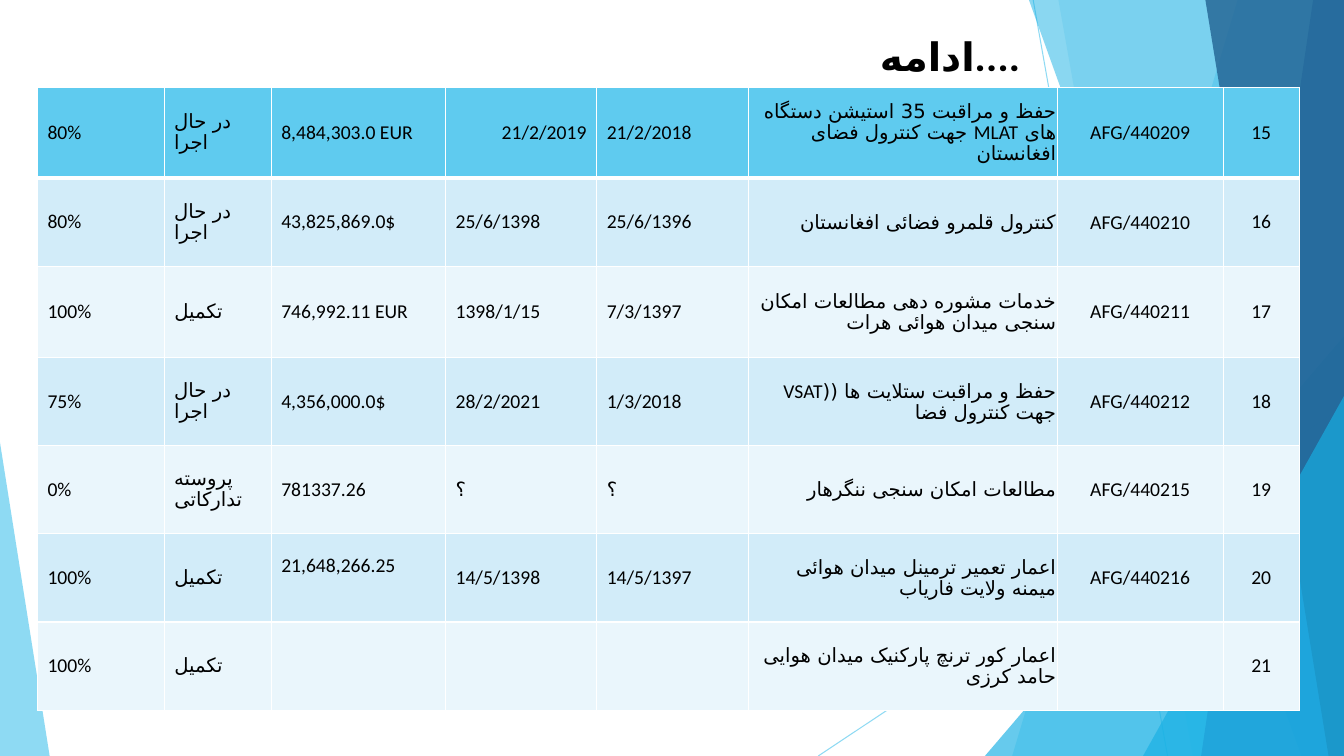
from dataclasses import astuple, dataclass

from lxml import etree
from pptx import Presentation
from pptx.dml.color import RGBColor
from pptx.enum.shapes import MSO_CONNECTOR, MSO_SHAPE
from pptx.enum.text import MSO_ANCHOR, MSO_AUTO_SIZE, PP_ALIGN
from pptx.oxml.ns import qn
from pptx.util import Pt

LEFT, CENTER, RIGHT = PP_ALIGN.LEFT, PP_ALIGN.CENTER, PP_ALIGN.RIGHT
MIDDLE = MSO_ANCHOR.MIDDLE
TRIANGLE = MSO_SHAPE.ISOSCELES_TRIANGLE
STRAIGHT = MSO_CONNECTOR.STRAIGHT

WIDTH, HEIGHT = 960, 540
PERSIAN_FONT = "DejaVu Sans"
COLORS = {
    "sky": "5FCBEF", "azure": "17B0E4", "blue": "2E83C3", "navy": "226292",
    "band_dark": "D2ECF9", "band_light": "EAF6FC",
    "text": "000000", "border": "FFFFFF",
}


@dataclass
class Ray:
    start: tuple[float, float]
    end: tuple[float, float]


@dataclass
class Facet:
    top_x: float
    bottom_x: float
    color: str
    opacity: int


@dataclass
class Wedge:
    left: float
    top: float
    width: float
    apex: float
    color: str
    opacity: int


@dataclass
class Project:
    progress: str
    status: str
    cost: str
    end: str
    start: str
    title: str
    code: str
    number: str


RAYS = [Ray((738, 0), (834, HEIGHT)), Ray((WIDTH, 290), (584.5, HEIGHT))]
DECOR = [
    Facet(884, 723, "sky", 36),
    Facet(756, 852, "sky", 20),
    Wedge(703.5, 240, 256.5, 1, "azure", 66),
    Facet(735, 929.5, "azure", 50),
    Facet(938, 858, "blue", 70),
    Facet(861, 949, "navy", 80),
    Wedge(816.5, 283, 143.5, 1, "azure", 66),
    Wedge(0, 316, 35.5, 0, "sky", 70),
]

ONGOING, DONE = "در حال اجرا", "تکمیل"
PROJECTS = [
    Project("80%", ONGOING, "8,484,303.0 EUR", "21/2/2019", "21/2/2018",
            "حفظ و مراقبت 35 استیشن دستگاه های MLAT جهت کنترول فضای افغانستان",
            "AFG/440209", "15"),
    Project("80%", ONGOING, "43,825,869.0$", "25/6/1398", "25/6/1396",
            "کنترول قلمرو فضائی افغانستان", "AFG/440210", "16"),
    Project("100%", DONE, "746,992.11 EUR", "1398/1/15", "7/3/1397",
            "خدمات مشوره دهی مطالعات امکان سنجی میدان هوائی هرات",
            "AFG/440211", "17"),
    Project("75%", ONGOING, "4,356,000.0$", "28/2/2021", "1/3/2018",
            "حفظ و مراقبت ستلایت ها ((VSAT جهت کنترول فضا",
            "AFG/440212", "18"),
    Project("0%", "پروسته تدارکاتی", "781337.26", "؟", "؟",
            "مطالعات امکان سنجی ننگرهار", "AFG/440215", "19"),
    Project("100%", DONE, "21,648,266.25", "14/5/1398", "14/5/1397",
            "اعمار تعمیر ترمینل میدان هوائی میمنه ولایت فاریاب",
            "AFG/440216", "20"),
    Project("100%", DONE, "", "", "",
            "اعمار کور ترنچ پارکنیک میدان هوایی حامد کرزی", "", "21"),
]
COLUMN_WIDTHS = [90.5, 76.5, 124.5, 108, 108.5, 220.5, 118.5, 54.5]
COLUMN_ALIGNS = [LEFT, LEFT, LEFT, LEFT, LEFT, RIGHT, CENTER, CENTER]
ROW_HEIGHTS = [65, 63, 65, 63, 63, 63, 63]
COST, END, TITLE, CODE = 2, 3, 5, 6


def rgb(name: str) -> RGBColor:
    return RGBColor.from_string(COLORS[name])


def set_opacity(shape, percent: int) -> None:
    for color in shape.element.spPr.iter(qn("a:srgbClr")):
        etree.SubElement(color, qn("a:alpha"), val=str(percent * 1000))


def format_run(run, font_name: str, size: float) -> None:
    """Style a run, with a separate typeface for its Persian letters."""
    run.font.name, run.font.size = font_name, Pt(size)
    run.font.color.rgb = rgb("text")
    etree.SubElement(run._r.get_or_add_rPr(), qn("a:cs"), typeface=PERSIAN_FONT)


def add_ray(shapes, ray: Ray) -> None:
    line = shapes.add_connector(STRAIGHT, *map(Pt, ray.start + ray.end))
    line.line.color.rgb = rgb("sky")
    line.line.width = Pt(0.75)
    set_opacity(line, 70)
    etree.SubElement(line.element.spPr, qn("a:effectLst"))


def add_decor(shapes, part: Facet | Wedge) -> None:
    """Draw a facet reaching the right edge, or a wedge standing on the bottom."""
    if isinstance(part, Facet):
        outline = shapes.build_freeform(Pt(part.top_x), 0)
        outline.add_line_segments([
            (Pt(WIDTH), 0), (Pt(WIDTH), Pt(HEIGHT)), (Pt(part.bottom_x), Pt(HEIGHT))])
        shape = outline.convert_to_shape()
    else:
        shape = shapes.add_shape(TRIANGLE, Pt(part.left), Pt(part.top),
                                 Pt(part.width), Pt(HEIGHT - part.top))
        shape.adjustments[0] = part.apex
    shape.shadow.inherit = False
    shape.fill.solid()
    shape.fill.fore_color.rgb = rgb(part.color)
    shape.line.fill.background()
    set_opacity(shape, part.opacity)


def format_title(title) -> None:
    title.left, title.top, title.width, title.height = map(Pt, (59, 17.5, 677, 44.5))
    frame = title.text_frame
    frame.text = "ادامه...."
    frame.auto_size = MSO_AUTO_SIZE.NONE
    frame.vertical_anchor = MIDDLE
    paragraph = frame.paragraphs[0]
    paragraph.alignment = RIGHT
    format_run(paragraph.runs[0], "Roboto", 28)
    paragraph.runs[0].font.bold = True


def set_borders(cell, top: float, bottom: float) -> None:
    properties = cell._tc.get_or_add_tcPr()
    for side, width in (("L", 1), ("R", 1), ("T", top), ("B", bottom)):
        line = etree.SubElement(properties, qn(f"a:ln{side}"), w=str(Pt(width)))
        fill = etree.SubElement(line, qn("a:solidFill"))
        etree.SubElement(fill, qn("a:srgbClr"), val=COLORS["border"])


def fill_cell(cell, text: str, row: int, column: int) -> None:
    set_borders(cell, top=3 if row == 1 else 1, bottom=3 if row == 0 else 1)
    cell.fill.solid()
    band = "band_dark" if row % 2 else "band_light"
    cell.fill.fore_color.rgb = rgb(band if row else "sky")
    cell.vertical_anchor = MIDDLE
    if column in (TITLE, CODE):
        cell.margin_left = cell.margin_right = cell.margin_top = Pt(0.75)
        cell.margin_bottom = 0
    if (row, column) == (5, COST):
        cell.margin_bottom = Pt(20)
    cell.text_frame.text = text
    paragraph = cell.text_frame.paragraphs[0]
    paragraph.alignment = RIGHT if (row, column) == (0, END) else COLUMN_ALIGNS[column]
    paragraph.line_spacing = 0.9
    if column == TITLE:
        paragraph._p.get_or_add_pPr().set("rtl", "1")
    for run in paragraph.runs:
        format_run(run, "Calibri", 14)


def add_projects(shapes) -> None:
    table = shapes.add_table(
        len(PROJECTS), len(COLUMN_WIDTHS), Pt(26.75), Pt(62.4),
        Pt(sum(COLUMN_WIDTHS)), Pt(sum(ROW_HEIGHTS))).table
    table.first_row = table.horz_banding = False
    for column, width in zip(table.columns, COLUMN_WIDTHS):
        column.width = Pt(width)
    for row, (project, height) in enumerate(zip(PROJECTS, ROW_HEIGHTS)):
        table.rows[row].height = Pt(height)
        for column, text in enumerate(astuple(project)):
            fill_cell(table.cell(row, column), text, row, column)


def main() -> None:
    deck = Presentation()
    deck.slide_width, deck.slide_height = Pt(WIDTH), Pt(HEIGHT)
    shapes = deck.slides.add_slide(deck.slide_layouts[5]).shapes
    for ray in RAYS:
        add_ray(shapes, ray)
    for part in DECOR:
        add_decor(shapes, part)
    format_title(shapes.title)
    shapes.element.append(shapes.title.element)
    add_projects(shapes)
    deck.save("out.pptx")


if __name__ == "__main__":
    main()
